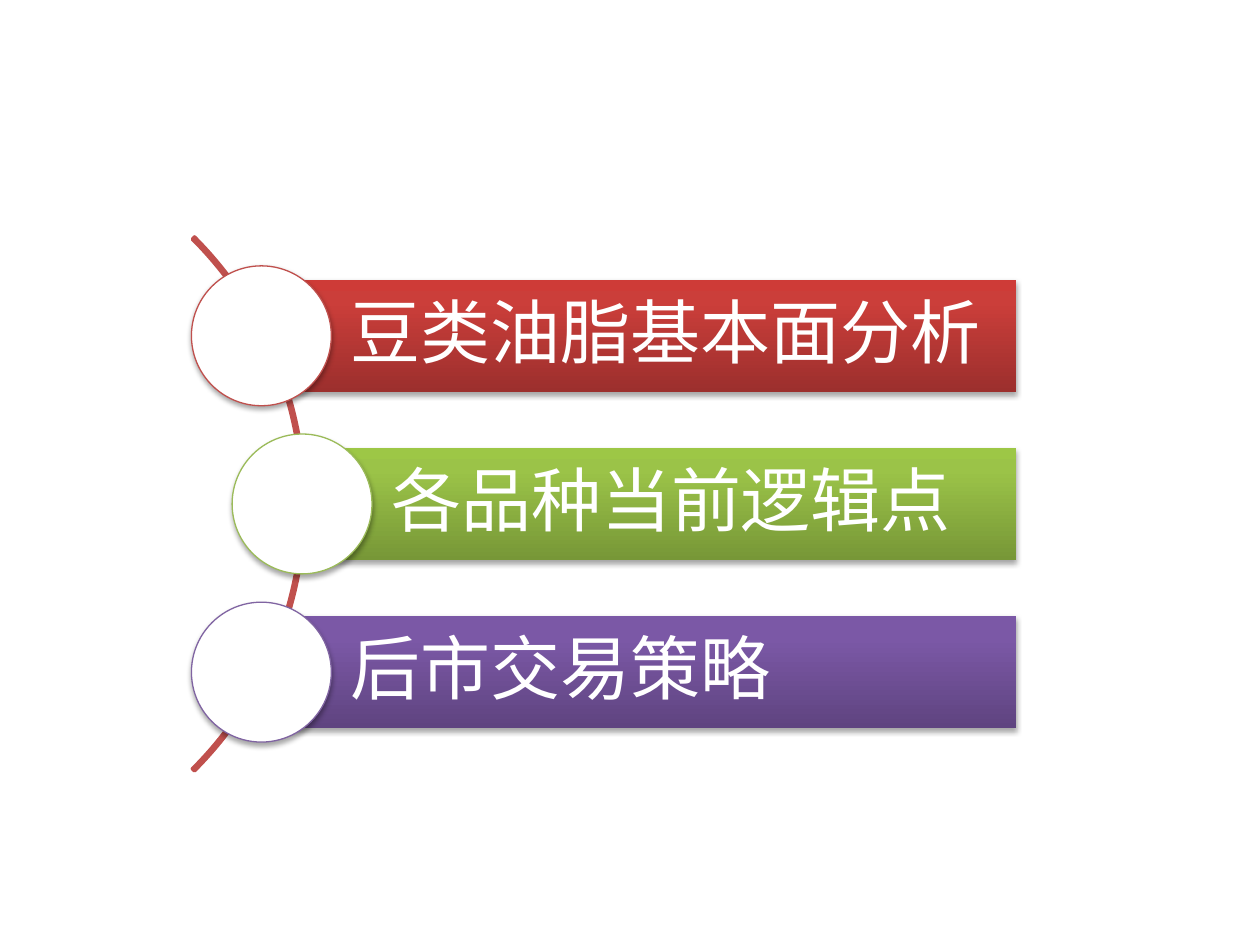
from dataclasses import dataclass

from lxml import etree
from pptx import Presentation
from pptx.dml.color import RGBColor
from pptx.enum import shapes, text
from pptx.oxml import ns
from pptx.util import Cm, Pt

COLORS = {
    "white": "FFFFFF", "shade": "000000",
    "red": "C0504D", "green": "9BBB59", "purple": "8064A2",
}
# Gradient colours from the bottom of a bar to its top
BLENDS = {
    "red": ("9C2F2D", "CB3E3A", "CE3B37"),
    "green": ("779737", "9BC348", "9DC746"),
    "purple": ("5F4480", "7B58A6", "7C57A8"),
}
STOPS = (0, 80, 100)
MID = 10.16    # height of the arc's centre
PITCH = 3.39   # step between topics
RIGHT = 20.48  # right edge of every bar
BAR = 2.26     # bar height
DISC = 2.82    # disc diameter
ARC = 15.22    # arc diameter


@dataclass
class Topic:
    label: str
    hue: str
    left: float  # centre of the disc and left edge of the bar


TOPICS = [
    Topic("豆类油脂基本面分析", "red", 5.27),
    Topic("各品种当前逻辑点", "green", 6.09),
    Topic("后市交易策略", "purple", 5.27),
]


def rgb(name: str) -> RGBColor:
    return RGBColor.from_string(COLORS[name])


def add_node(parent, tag: str, **attrs):
    items = {key: str(val) for key, val in attrs.items()}
    return etree.SubElement(parent, ns.qn(tag), items)


def add_shade(shape) -> None:
    """Give the shape a soft shadow straight below it."""
    shape.shadow.inherit = False
    effects = shape.element.spPr.find(ns.qn("a:effectLst"))
    outer = add_node(effects, "a:outerShdw", blurRad=Pt(3.1), dist=Pt(1.8),
                     dir=90 * 60000, rotWithShape=0)
    color = add_node(outer, "a:srgbClr", val=COLORS["shade"])
    add_node(color, "a:alpha", val=35000)


def set_blend(shape, hue: str) -> None:
    """Fill the shape with a three-stop gradient running upwards."""
    shape.fill.gradient()
    shape.fill.gradient_angle = 90
    stops = next(shape.element.spPr.iter(ns.qn("a:gsLst")))
    for old in list(stops):
        stops.remove(old)
    for pos, color in zip(STOPS, BLENDS[hue]):
        stop = add_node(stops, "a:gs", pos=pos * 1000)
        add_node(stop, "a:srgbClr", val=color)


def add_arc(group) -> None:
    arc = group.add_shape(shapes.MSO_SHAPE.BLOCK_ARC, Cm(-9.07),
                          Cm(MID - ARC / 2), Cm(ARC), Cm(ARC))
    # Angles in 60000ths of a degree over 100000, then the relative thickness
    for i, value in enumerate((315 * 0.6, 45 * 0.6, 0.004)):
        arc.adjustments[i] = value
    arc.fill.background()
    arc.line.color.rgb = rgb("red")
    arc.line.width = Pt(2)
    arc.shadow.inherit = False


def add_bar(group, topic: Topic, mid: float) -> None:
    bar = group.add_shape(shapes.MSO_SHAPE.RECTANGLE, Cm(topic.left),
                          Cm(mid - BAR / 2), Cm(RIGHT - topic.left), Cm(BAR))
    set_blend(bar, topic.hue)
    bar.line.fill.background()
    add_shade(bar)
    frame = bar.text_frame
    frame.word_wrap = True
    frame.vertical_anchor = text.MSO_ANCHOR.MIDDLE
    frame.margin_left = Cm(1.8)
    frame.margin_top = frame.margin_right = frame.margin_bottom = Cm(0.28)
    para = frame.paragraphs[0]
    para.alignment = text.PP_ALIGN.LEFT
    para.line_spacing = 0.9
    run = para.add_run()
    run.text = topic.label
    run.font.name = "Calibri"
    run.font.size = Pt(40)
    run.font.color.rgb = rgb("white")


def add_disc(group, topic: Topic, mid: float) -> None:
    disc = group.add_shape(shapes.MSO_SHAPE.OVAL, Cm(topic.left - DISC / 2),
                           Cm(mid - DISC / 2), Cm(DISC), Cm(DISC))
    disc.fill.solid()
    disc.fill.fore_color.rgb = rgb("white")
    disc.line.color.rgb = rgb(topic.hue)
    disc.line.width = Pt(0.75)
    add_shade(disc)


def main() -> None:
    deck = Presentation()
    deck.slide_width, deck.slide_height = Cm(25.4), Cm(19.05)
    slide = deck.slides.add_slide(deck.slide_layouts[6])
    group = slide.shapes.add_group_shape().shapes
    add_arc(group)
    for i, topic in enumerate(TOPICS):
        mid = MID + (i - 1) * PITCH
        add_bar(group, topic, mid)
        add_disc(group, topic, mid)
    deck.save("out.pptx")


if __name__ == "__main__":
    main()
